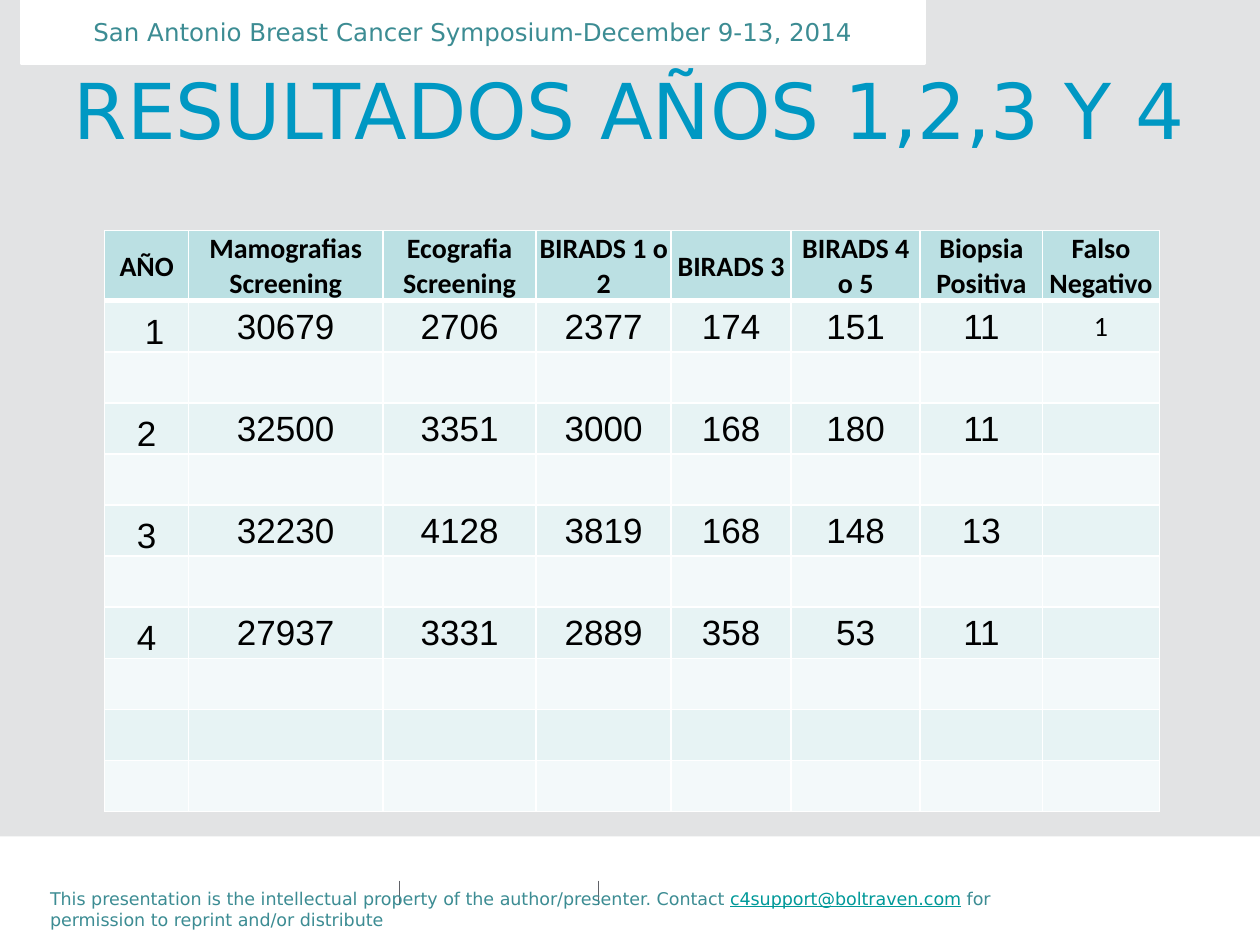
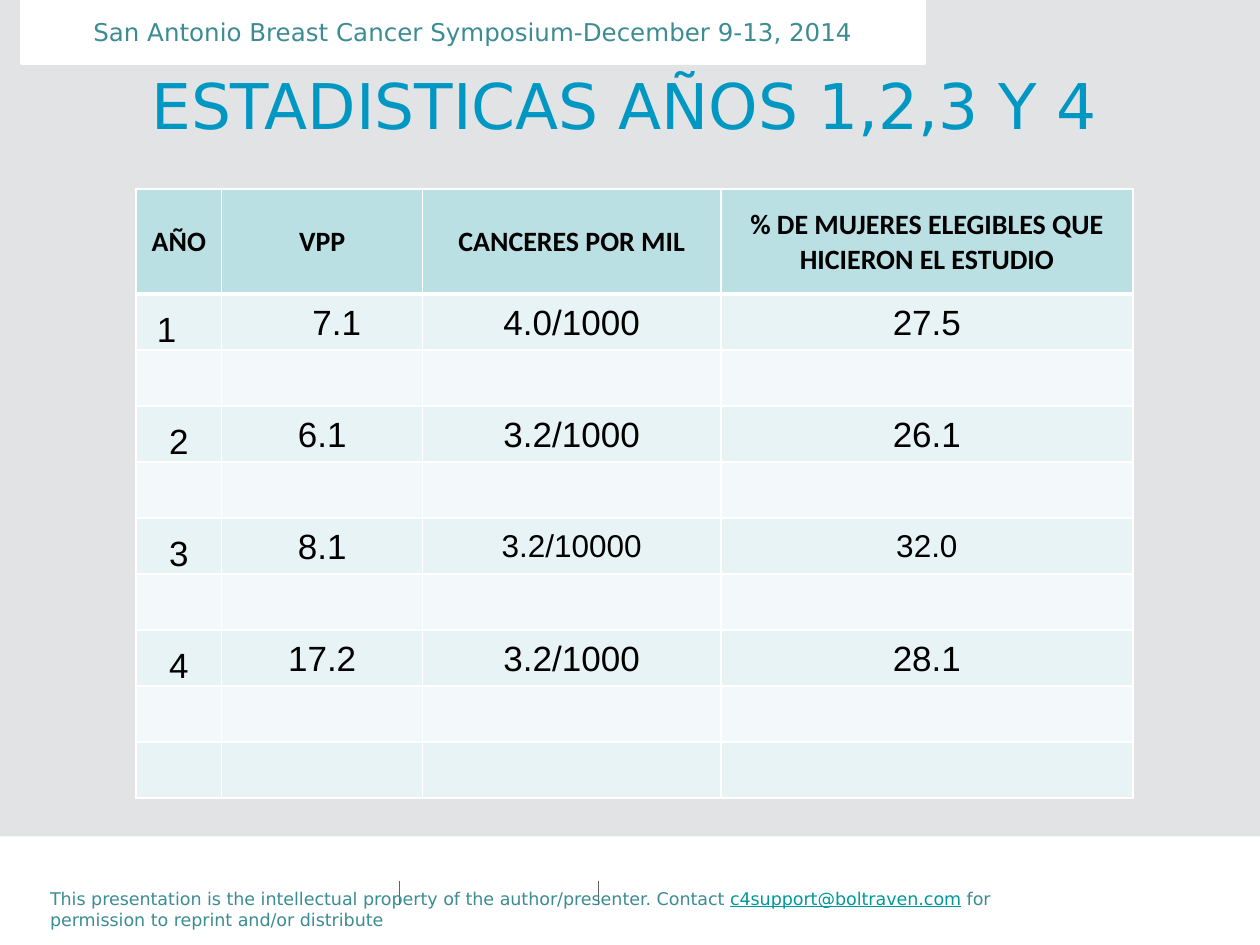
from pptx import Presentation
from pptx.dml.color import RGBColor
from pptx.enum.shapes import MSO_CONNECTOR, MSO_SHAPE
from pptx.enum.text import MSO_ANCHOR, MSO_AUTO_SIZE, PP_ALIGN
from pptx.oxml.ns import qn
from pptx.util import Cm, Pt
from lxml import etree

RECT = MSO_SHAPE.RECTANGLE
LINE = MSO_CONNECTOR.STRAIGHT
TOP, MIDDLE, BOTTOM = MSO_ANCHOR.TOP, MSO_ANCHOR.MIDDLE, MSO_ANCHOR.BOTTOM
LEFT, CENTER = PP_ALIGN.LEFT, PP_ALIGN.CENTER
FIXED = MSO_AUTO_SIZE.NONE

HUES = {
    "back": "E2E3E4", "white": "FFFFFF", "tick": "606268", "title": "0098C3",
    "teal": "3C8C93", "link": "009999", "black": "000000",
    "head": "BBE0E3", "odd": "E7F3F4", "even": "F3F9FA",
}
SANS = "DejaVu Sans"
BANNER = "San Antonio Breast Cancer Symposium-December 9-13, 2014"
NOTICE = [
    ("This presentation is the intellectual property of the author/presenter. Contact ", "teal", False),
    ("c4support@boltraven.com", "link", True),
    (" for permission to reprint and/or distribute", "teal", False),
]

PAGES = [
    {
        "title": "RESULTADOS AÑOS 1,2,3 Y 4", "size": 44,
        "box": (0.64, 0.99, 24.13, 2.82),
        "place": (2.11, 4.65),
        "cols": [1.69, 3.92, 3.09, 2.72, 2.42, 2.6, 2.47, 2.35],
        "tall": 1.39, "step": 1.03, "count": 10,
        "head": ["AÑO", "Mamografias\nScreening", "Ecografia\nScreening", "BIRADS 1 o 2",
                 "BIRADS 3", "BIRADS 4 o 5", "Biopsia\nPositiva", "Falso Negativo"],
        "years": [
            ["1", "30679", "2706", "2377", "174", "151", "11", "1"],
            ["2", "32500", "3351", "3000", "168", "180", "11", ""],
            ["3", "32230", "4128", "3819", "168", "148", "13", ""],
            ["4", "27937", "3331", "2889", "358", "53", "11", ""],
        ],
        "indents": {(1, 0): 0.78},
        "fonts": {(1, 7): ("Calibri", 16)},
    },
    {
        "title": "ESTADISTICAS AÑOS 1,2,3 Y 4", "size": 36,
        "box": (0.84, 1.07, 23.5, 2.54),
        "place": (2.74, 3.81),
        "cols": [1.73, 4.05, 6.01, 8.31],
        "tall": 2.12, "step": 1.13, "count": 9,
        "head": ["AÑO", "VPP", "CANCERES POR MIL", "% DE MUJERES ELEGIBLES QUE HICIERON EL ESTUDIO"],
        "years": [
            ["1", "7.1", "4.0/1000", "27.5"],
            ["2", "6.1", "3.2/1000", "26.1"],
            ["3", "8.1", "3.2/10000", "32.0"],
            ["4", "17.2", "3.2/1000", "28.1"],
        ],
        "indents": {(1, 0): 0.39, (1, 1): 0.59},
        "fonts": {(5, 2): ("Arial", 18), (5, 3): ("Arial", 18)},
    },
]


def style(font, hue, **values):
    for name, value in values.items():
        setattr(font, name, value)
    font.color.rgb = RGBColor.from_string(HUES[hue])


def border(cell, edges):
    props = cell._tc.get_or_add_tcPr()
    for side, width in edges.items():
        line = etree.SubElement(props, qn("a:ln" + side), w=str(Pt(width)))
        fill = etree.SubElement(line, qn("a:solidFill"))
        etree.SubElement(fill, qn("a:srgbClr"), val=HUES["white"])


deck = Presentation()
deck.slide_width, deck.slide_height = Cm(25.4), Cm(19.05)
back = deck.slide_master.background.fill
back.solid()
back.fore_color.rgb = RGBColor.from_string(HUES["back"])

for page in PAGES:
    slide = deck.slides.add_slide(deck.slide_layouts[5])
    shapes = slide.shapes

    title = shapes.title
    title.left, title.top, title.width, title.height = map(Cm, page["box"])
    frame = title.text_frame
    frame.text = page["title"]
    looks = {"word_wrap": True, "auto_size": FIXED, "vertical_anchor": TOP,
             "margin_left": Cm(0.28), "margin_right": Cm(0.28),
             "margin_top": Cm(0.27), "margin_bottom": Cm(0.15)}
    for name, value in looks.items():
        setattr(frame, name, value)
    frame.paragraphs[0].alignment = CENTER
    style(frame.paragraphs[0].runs[0].font, "title", name=SANS, size=Pt(page["size"]))

    bands = []
    for box in [(0, 16.86, 25.4, 2.19), (0.43, 0, 18.21, 1.27)]:
        band = shapes.add_shape(RECT, *map(Cm, box))
        band.shadow.inherit = False
        band.fill.solid()
        band.fill.fore_color.rgb = RGBColor.from_string(HUES["white"])
        band.line.fill.background()
        bands.append(band)
    banner = bands[1]
    banner.line.color.rgb = RGBColor.from_string(HUES["white"])
    banner.line.width = Pt(2)
    frame = banner.text_frame
    frame.text = BANNER
    frame.vertical_anchor = MIDDLE
    frame.paragraphs[0].alignment = CENTER
    style(frame.paragraphs[0].runs[0].font, "teal", name=SANS, size=Pt(14))

    for x in (8.05, 12.07):
        tick = shapes.add_connector(LINE, Cm(x), Cm(17.75), Cm(x), Cm(18.24))
        tick.line.color.rgb = RGBColor.from_string(HUES["tick"])
        tick.line.width = Pt(0.5)
        etree.SubElement(tick._element.spPr, qn("a:effectLst"))

    rows = [page["head"]] + [[""] * len(page["cols"]) for _ in range(page["count"])]
    rows[1:8:2] = page["years"]
    high = page["tall"] + page["step"] * page["count"]
    area = (*page["place"], sum(page["cols"]), high)
    grid = shapes.add_table(len(rows), len(page["cols"]), *map(Cm, area)).table
    grid.first_row = grid.horz_banding = False
    for col, width in zip(grid.columns, page["cols"]):
        col.width = Cm(width)
    for r, row in enumerate(rows):
        grid.rows[r].height = Cm(page["step"] if r else page["tall"])
        hue = ("odd" if r % 2 else "even") if r else "head"
        for c, text in enumerate(row):
            cell = grid.cell(r, c)
            border(cell, {"L": 1, "R": 1, "T": 3 if r == 1 else 1, "B": 1 if r else 3})
            cell.fill.solid()
            cell.fill.fore_color.rgb = RGBColor.from_string(HUES[hue])
            if not text:
                continue
            cell.text = text
            looks = {"margin_left": Cm(0.03), "margin_right": Cm(0.03),
                     "margin_top": Cm(0.03), "margin_bottom": 0,
                     "vertical_anchor": BOTTOM if r and not c else MIDDLE}
            for name, value in looks.items():
                setattr(cell, name, value)
            face, size = page["fonts"].get((r, c), ("Arial", 20) if r else ("Calibri", 16))
            for para in cell.text_frame.paragraphs:
                para.alignment = LEFT if (r, c) == (1, 0) else CENTER
                if (r, c) in page["indents"]:
                    para._p.get_or_add_pPr().set("marL", str(Cm(page["indents"][r, c])))
                style(para.runs[0].font, "black", name=face, size=Pt(size), bold=r == 0)

    notice = shapes.add_textbox(Cm(0.76), Cm(17.78), Cm(20.42), Cm(1.12))
    notice.text_frame.word_wrap = True
    for text, hue, under in NOTICE:
        run = notice.text_frame.paragraphs[0].add_run()
        run.text = text
        style(run.font, hue, name=SANS, size=Pt(10), underline=under)

deck.save("out.pptx")
